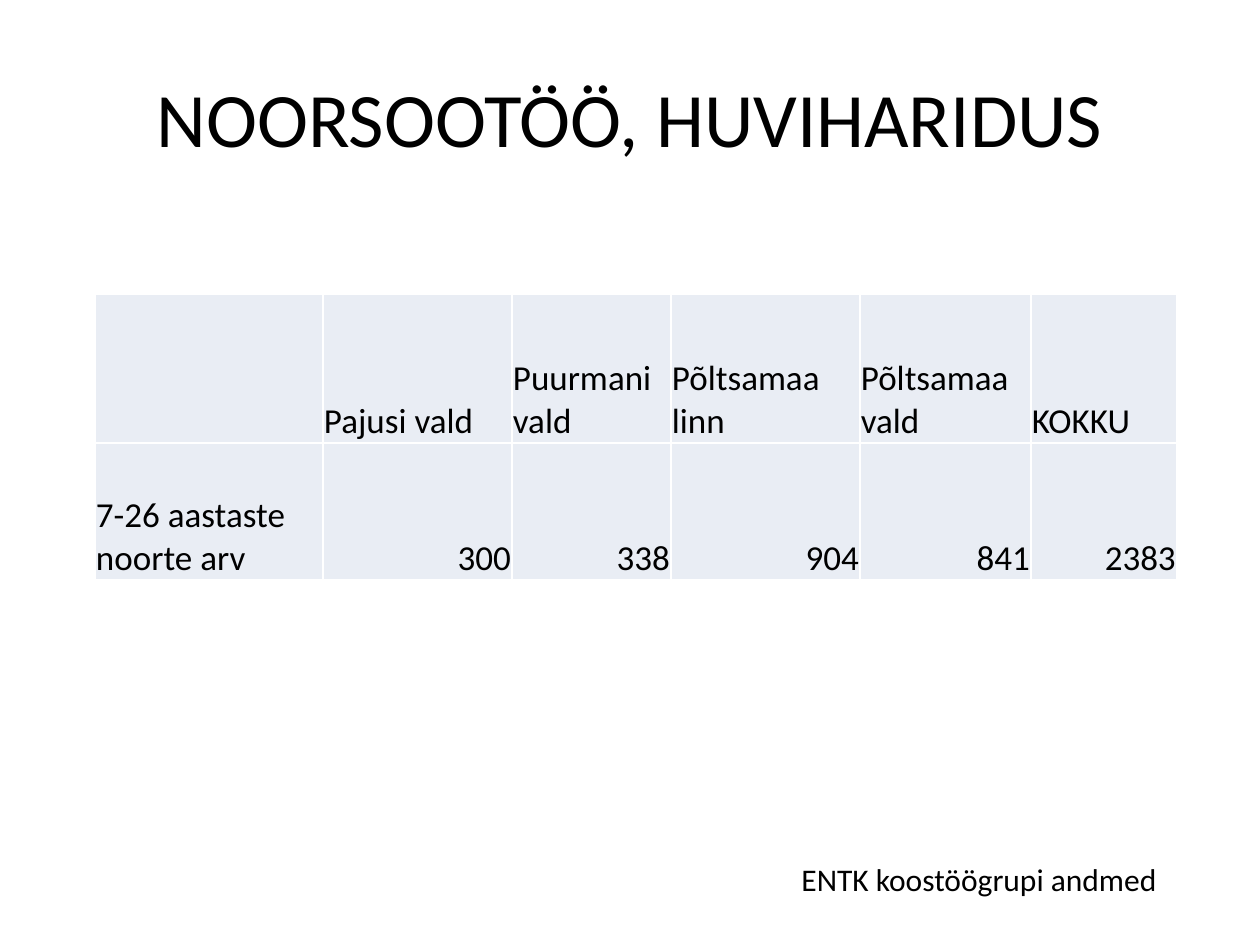
from pptx import Presentation
from pptx import util as u
from pptx.dml.color import RGBColor
from pptx.enum import text

PX = u.Inches(1) // 126
FONT, INK, CELL_FILL = "Calibri", "000000", "E9EDF4"


def color(value):
    return RGBColor.from_string(value)


def format_paragraph(paragraph, size, alignment):
    paragraph.alignment = alignment
    paragraph.font.name = FONT
    paragraph.font.size = u.Pt(size)
    paragraph.font.color.rgb = color(INK)


presentation = Presentation()
presentation.slide_width = 1260 * PX
presentation.slide_height = 945 * PX
slide = presentation.slides.add_slide(presentation.slide_layouts[5])

title = slide.shapes.title
title.left, title.top, title.width, title.height = 63 * PX, 38 * PX, 1134 * PX, 157 * PX
title.text_frame.text = "NOORSOOTÖÖ, HUVIHARIDUS"
title.text_frame.vertical_anchor = text.MSO_ANCHOR.MIDDLE
format_paragraph(title.text_frame.paragraphs[0], 44, text.PP_ALIGN.CENTER)

rows = [
    ["", "Pajusi vald", "Puurmani vald", "Põltsamaa linn", "Põltsamaa vald", "KOKKU"],
    ["7-26 aastaste noorte arv", "300", "338", "904", "841", "2383"],
]
column_widths = [228, 189, 159, 189, 171, 146]
row_heights = [149, 137]

table = slide.shapes.add_table(
    len(rows), len(column_widths), 95 * PX, 294 * PX,
    sum(column_widths) * PX, sum(row_heights) * PX,
).table
# The table style draws the thin white cell borders
table.first_row = False
table.horz_banding = False
for column, width in zip(table.columns, column_widths):
    column.width = width * PX
for row, height, values in zip(table.rows, row_heights, rows):
    row.height = height * PX
    for cell, value in zip(row.cells, values):
        cell.fill.solid()
        cell.fill.fore_color.rgb = color(CELL_FILL)
        cell.margin_left = cell.margin_right = cell.margin_top = PX
        cell.margin_bottom = 0
        cell.vertical_anchor = text.MSO_ANCHOR.BOTTOM
        cell.text = value
        alignment = text.PP_ALIGN.RIGHT if value.isdigit() else text.PP_ALIGN.LEFT
        format_paragraph(cell.text_frame.paragraphs[0], 20, alignment)

source_note = slide.shapes.add_textbox(789 * PX, 854 * PX, 384 * PX, 51 * PX)
source_note.text_frame.word_wrap = False
source_note.text_frame.auto_size = text.MSO_AUTO_SIZE.SHAPE_TO_FIT_TEXT
source_note.text_frame.text = "ENTK koostöögrupi andmed"
format_paragraph(source_note.text_frame.paragraphs[0], 18, text.PP_ALIGN.LEFT)

presentation.save("out.pptx")
